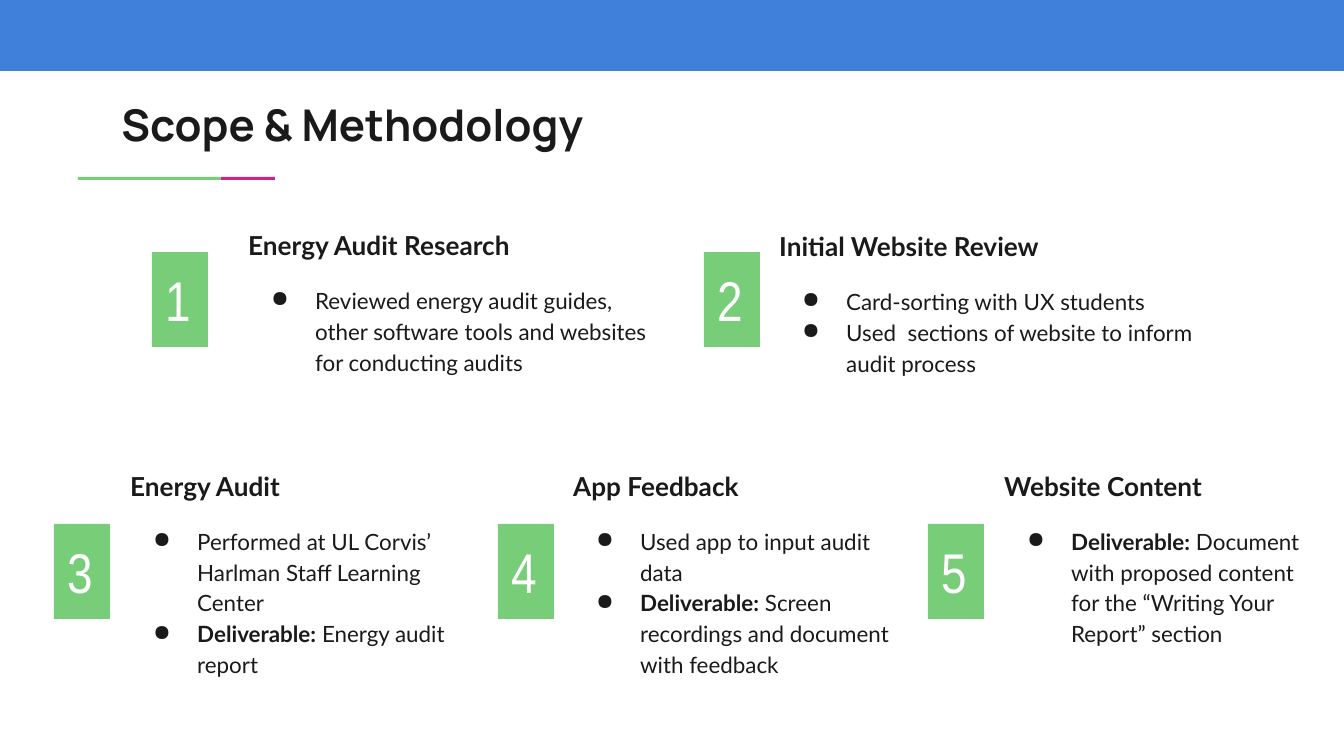
from lxml import etree
from pptx import Presentation, util as u
from pptx.dml.color import RGBColor
from pptx.enum import shapes, text
from pptx.oxml.ns import qn

HUES = {"blue": "4080DA", "green": "78CD79", "pink": "CF2385",
        "ink": "1A1A1A", "white": "FFFFFF"}
LEAD = "Deliverable:"
STEPS = [
    ((152, 252), (235, 211, 430, 176), "Energy Audit Research",
     ["Reviewed energy audit guides, other software tools and websites for conducting audits"]),
    ((704, 252), (766, 212, 444, 176), "Initial Website Review",
     ["Card-sorting with UX students",
      "Used  sections of website to inform audit process"]),
    ((54, 524), (117, 452, 375, 238), "Energy Audit",
     ["Performed at UL Corvis’ Harlman Staff Learning Center",
      "Deliverable: Energy audit report"]),
    ((498, 524), (560, 452, 360, 238), "App Feedback",
     ["Used app to input audit data",
      "Deliverable: Screen recordings and document with feedback"]),
    ((928, 524), (991, 452, 345, 207), "Website Content",
     ["Deliverable: Document with proposed content for the “Writing Your Report” section"]),
]


def px(n):
    return u.Emu(round(n * 914400 / 134.4))


def hue(name):
    return RGBColor.from_string(HUES[name])


def write(para, words, *, size, font="Lato", color="ink", bold=False):
    run = para.add_run()
    run.text = words
    run.font.size = u.Pt(size)
    run.font.name = font
    run.font.bold = bold
    run.font.color.rgb = hue(color)


def frame(shape, anchor):
    body = shape.text_frame
    body.word_wrap = True
    body.auto_size = text.MSO_AUTO_SIZE.NONE
    body.vertical_anchor = anchor
    body.margin_left = body.margin_right = u.Inches(0.1)
    body.margin_top = body.margin_bottom = u.Inches(0.1)
    body.paragraphs[0].alignment = text.PP_ALIGN.LEFT
    return body


def block(slide, box, color):
    shape = slide.shapes.add_shape(shapes.MSO_SHAPE.RECTANGLE, *map(px, box))
    shape.shadow.inherit = False
    shape.fill.solid()
    shape.fill.fore_color.rgb = hue(color)
    shape.line.fill.background()
    return shape


def title(slide, box, words):
    head = slide.shapes.title
    head.left, head.top, head.width, head.height = map(px, box)
    body = frame(head, text.MSO_ANCHOR.MIDDLE)
    write(body.paragraphs[0], words, size=23.4, font="Manrope", bold=True)


def badge(slide, spot, num):
    shape = block(slide, (*spot, 56, 95), "green")
    body = frame(shape, text.MSO_ANCHOR.MIDDLE)
    write(body.paragraphs[0], str(num), size=30, font="Arial Narrow", color="white")


def bullet(para):
    props = para._p.get_or_add_pPr()
    props.set("marL", str(px(67)))
    props.set("indent", str(px(-44)))
    tint = etree.SubElement(props, qn("a:buClr"))
    etree.SubElement(tint, qn("a:srgbClr"), val=HUES["ink"])
    etree.SubElement(props, qn("a:buChar"), char="●")


def notes(slide, box, head, items):
    shape = slide.shapes.add_textbox(*map(px, box))
    body = frame(shape, text.MSO_ANCHOR.TOP)
    para = body.paragraphs[0]
    para.line_spacing = 1.15
    write(para, head, size=14, bold=True)
    for i, item in enumerate(items):
        para = body.add_paragraph()
        para.line_spacing = 1.15
        para.space_before = u.Pt(0 if i else 12)
        bullet(para)
        if item.startswith(LEAD):
            write(para, LEAD, size=12, bold=True)
        write(para, item.removeprefix(LEAD), size=12)


def main():
    deck = Presentation()
    deck.slide_width, deck.slide_height = px(1344), px(756)
    slide = deck.slides.add_slide(deck.slide_layouts[5])
    block(slide, (0, 0, 1344, 71), "blue")
    block(slide, (221, 177, 54, 3), "pink")
    block(slide, (78, 177, 143, 3), "green")
    title(slide, (108, 85, 1130, 79), "Scope & Methodology")
    for num, (spot, box, head, items) in enumerate(STEPS, 1):
        notes(slide, box, head, items)
        badge(slide, spot, num)
    deck.save("out.pptx")


if __name__ == "__main__":
    main()
